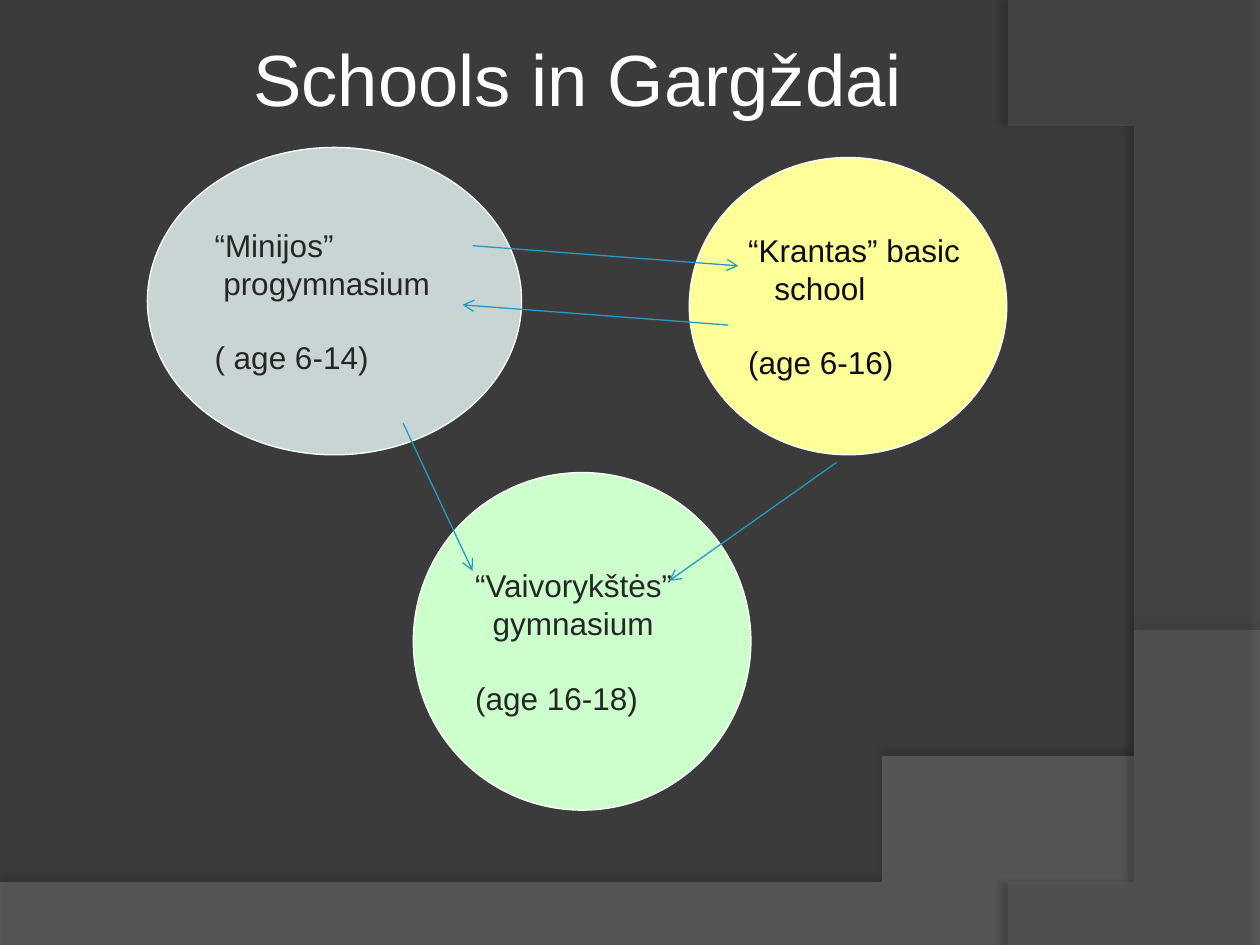
from lxml import etree
from pptx import Presentation
from pptx.dml.color import RGBColor
from pptx.enum.shapes import MSO_CONNECTOR, MSO_SHAPE
from pptx.enum.text import MSO_ANCHOR, PP_ALIGN
from pptx.oxml.ns import qn
from pptx.util import Inches, Pt

LINE = MSO_CONNECTOR.STRAIGHT
OVAL = MSO_SHAPE.OVAL
TOP, MID = MSO_ANCHOR.TOP, MSO_ANCHOR.MIDDLE
LEFT, CENTER = PP_ALIGN.LEFT, PP_ALIGN.CENTER
WHITE = RGBColor(0xFF, 0xFF, 0xFF)
DARK = RGBColor(0x3B, 0x3B, 0x3B)
GRAY = RGBColor(0x7F, 0x7F, 0x7F)
SLATE = RGBColor(0x5E, 0x5E, 0x5E)
YELLOW = RGBColor(0xFF, 0xFF, 0x99)
MIST = RGBColor(0xC9, 0xD5, 0xD4)
GREEN = RGBColor(0xCC, 0xFF, 0xCC)
BLACK = RGBColor(0x0D, 0x0D, 0x0D)
INK = RGBColor(0x26, 0x26, 0x26)
BLUE = RGBColor(0x23, 0x9B, 0xC2)

deck = Presentation()
deck.slide_width, deck.slide_height = Inches(10), Inches(7.5)
COL = deck.slide_width // 10
ROW = deck.slide_height * 2 // 15
slide = deck.slides.add_slide(deck.slide_layouts[6])
slide.background.fill.solid()
slide.background.fill.fore_color.rgb = DARK
shapes = slide.shapes


def place(x, y, w, h):
    return int(x * COL), int(y * ROW), int(w * COL), int(h * ROW)


def write(para, text, size, color):
    run = para.add_run()
    run.text = text
    run.font.name = "Arial"
    run.font.size = Pt(size)
    run.font.color.rgb = color


STEPS = 60
waves = [
    ([(0, 7.5), (10, 7.5)], [(10, 5.2), (5.59, 7.29), (3.91, 7.19), (0, 7.05)],
     GRAY, 45, 35, 3.5, 270),
    ([(10, 0.02), (10, 7.5)], [(8.21, 7.5), (9.35, 6.19), (10.18, 3), (8, 0)],
     SLATE, 40, 45, 4, 180),
]
for edge, bend, color, alpha, shade, dist, angle in waves:
    points = list(edge)
    for step in range(STEPS + 1):
        t = step / STEPS
        mix = [(1 - t) ** 3, 3 * t * (1 - t) ** 2, 3 * t * t * (1 - t), t ** 3]
        points.append([sum(m * p[axis] for m, p in zip(mix, bend)) for axis in (0, 1)])
    pen = shapes.build_freeform(*points[0], scale=COL)
    pen.add_line_segments(points[1:], close=True)
    wave = pen.convert_to_shape()
    wave.shadow.inherit = False
    wave.fill.solid()
    wave.fill.fore_color.rgb = color
    wave.line.fill.background()
    props = wave.element.spPr
    tint = props.find(qn("a:solidFill")).find(qn("a:srgbClr"))
    etree.SubElement(tint, qn("a:alpha"), val=str(alpha * 1000))
    cast = etree.SubElement(props.find(qn("a:effectLst")), qn("a:outerShdw"),
                            blurRad=str(Pt(4)), dist=str(Pt(dist)),
                            dir=str(angle * 60000), rotWithShape="0")
    tone = etree.SubElement(cast, qn("a:srgbClr"), val="000000")
    etree.SubElement(tone, qn("a:alpha"), val=str(shade * 1000))

title = shapes.add_textbox(*place(0.5, 0.27, 8.17, 1.25)).text_frame
title.word_wrap = True
title.vertical_anchor = TOP
title.margin_top = 0
title.margin_left = title.margin_right = Inches(0.05)
title.paragraphs[0].alignment = CENTER
write(title.paragraphs[0], "Schools in Gargždai", 41.4, WHITE)

schools = [
    ((5.47, 1.25, 2.52, 2.36), YELLOW, BLACK, 15,
     ["“Krantas” basic", "school", "(age 6-16)"]),
    ((1.17, 1.17, 2.97, 2.44), MIST, INK, 5,
     ["“Minijos”", "progymnasium", "( age 6-14)"]),
    ((3.28, 3.75, 2.68, 2.68), GREEN, INK, 10,
     ["“Vaivorykštės”", "gymnasium", "(age 16-18)"]),
]
for box, color, ink, indent, lines in schools:
    school = shapes.add_shape(OVAL, *place(*box))
    school.shadow.inherit = False
    school.fill.solid()
    school.fill.fore_color.rgb = color
    school.line.color.rgb = WHITE
    school.line.width = Pt(0.75)
    frame = school.text_frame
    frame.word_wrap = False
    frame.vertical_anchor = MID
    for row, text in enumerate(lines):
        para = frame.add_paragraph() if row else frame.paragraphs[0]
        para.alignment = LEFT
        write(para, text, 18, ink)
    frame.paragraphs[1]._p.get_or_add_pPr().set("marL", str(Pt(indent)))
    frame.paragraphs[2].space_before = Pt(21)

arrows = [
    (3.75, 1.95, 5.86, 2.11),
    (3.2, 3.36, 3.75, 4.53),
    (6.64, 3.67, 5.31, 4.61),
    (5.78, 2.58, 3.67, 2.42),
]
for ends in arrows:
    arrow = shapes.add_connector(LINE, *place(*ends))
    arrow.line.color.rgb = BLUE
    arrow.line.width = Pt(0.75)
    props = arrow.element.spPr
    etree.SubElement(props.find(qn("a:ln")), qn("a:tailEnd"), type="arrow")
    etree.SubElement(props, qn("a:effectLst"))

deck.save("out.pptx")
